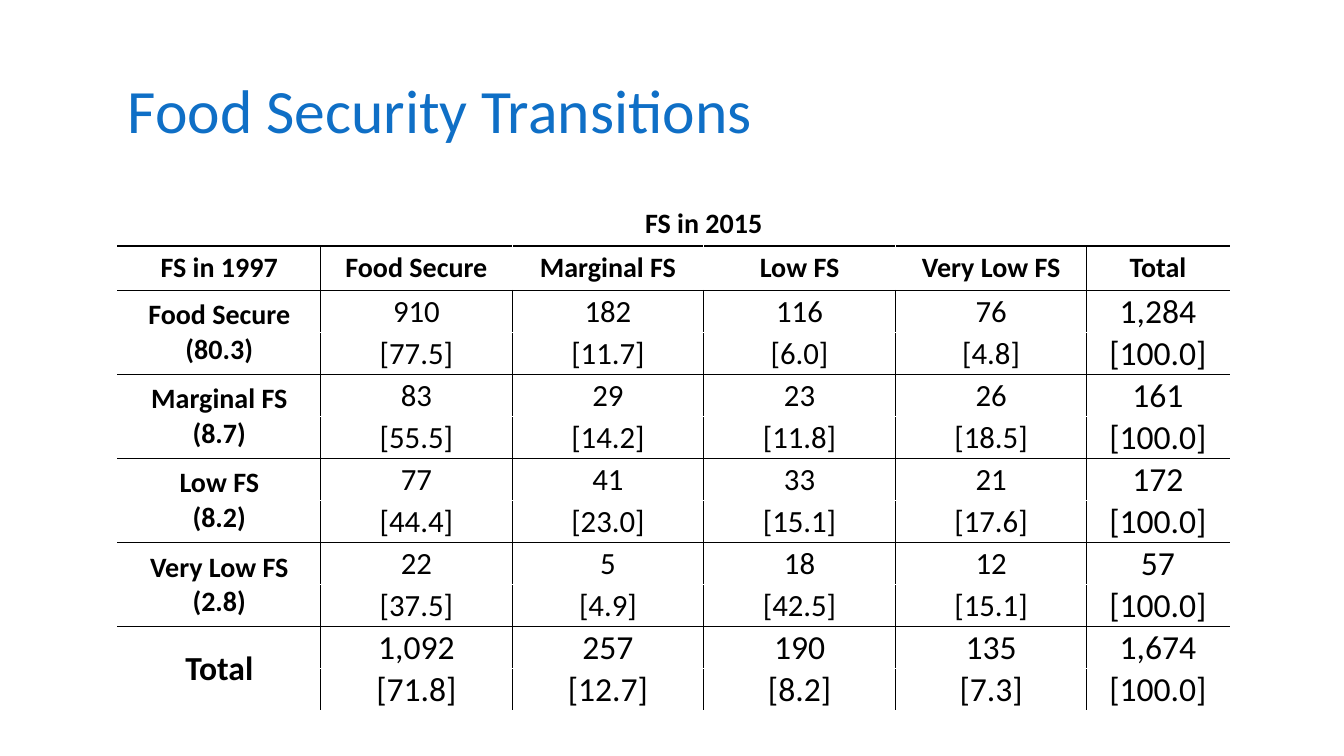
from lxml.etree import SubElement
from pptx import Presentation
from pptx.dml.color import RGBColor
from pptx.enum.text import MSO_ANCHOR as Anchor, PP_ALIGN as Align
from pptx.oxml.ns import qn
from pptx.util import Inches, Pt

COLUMN_WIDTHS = [2.01, 1.9, 1.9, 1.9, 1.9, 1.41]
ROW_COUNT = 12
TABLE_HEIGHT = 4.97
LAST_COLUMN = len(COLUMN_WIDTHS) - 1
TOTAL_ROW = ROW_COUNT - 2
ROWS = [
    ["", "FS in 2015", "", "", "", ""],
    ["FS in 1997", "Food Secure", "Marginal FS", "Low FS", "Very Low FS", "Total"],
    ["Food Secure", "910", "182", "116", "76", "1,284"],
    ["(80.3)", "[77.5]", "[11.7]", "[6.0]", "[4.8]", "[100.0]"],
    ["Marginal FS", "83", "29", "23", "26", "161"],
    ["(8.7)", "[55.5]", "[14.2]", "[11.8]", "[18.5]", "[100.0]"],
    ["Low FS", "77", "41", "33", "21", "172"],
    ["(8.2)", "[44.4]", "[23.0]", "[15.1]", "[17.6]", "[100.0]"],
    ["Very Low FS", "22", "5", "18", "12", "57"],
    ["(2.8)", "[37.5]", "[4.9]", "[42.5]", "[15.1]", "[100.0]"],
    ["Total", "1,092", "257", "190", "135", "1,674"],
    ["", "[71.8]", "[12.7]", "[8.2]", "[7.3]", "[100.0]"],
]


def color(value):
    return RGBColor.from_string(value)


def has_line_below(row):
    return row == 0 or (row % 2 == 1 and 0 < row < ROW_COUNT - 1)


def has_line_right(row, column):
    if row == 0:
        return False
    return column in (0, 4) if row == 1 else 0 <= column < LAST_COLUMN


def text_size(row, column):
    if row >= TOTAL_ROW or (row > 1 and column == LAST_COLUMN):
        return 24
    return 22 if row > 1 and column > 0 else 20


class TransitionSlide:
    font = "Calibri"
    ink = "000000"
    paper = "FFFFFF"
    accent = "0F6FC6"

    def __init__(self, deck):
        self.page = deck.slides.add_slide(deck.slide_layouts[6])

    def set_text(self, para, text, size, ink, bold=False, align=Align.LEFT):
        para.text = text
        para.alignment = align
        para.font.name = self.font
        para.font.size = Pt(size)
        para.font.bold = bold
        para.font.color.rgb = color(ink)

    def title(self, text, left, top, width, height):
        box = self.page.shapes.add_textbox(
            Inches(left), Inches(top), Inches(width), Inches(height))
        frame = box.text_frame
        frame.word_wrap = True
        frame.vertical_anchor = Anchor.MIDDLE
        para = frame.paragraphs[0]
        self.set_text(para, text, 44, self.accent)
        para.line_spacing = 0.9

    def borders(self, cell, row, column):
        lines = {
            "a:lnL": has_line_right(row, column - 1),
            "a:lnR": has_line_right(row, column),
            "a:lnT": has_line_below(row - 1),
            "a:lnB": has_line_below(row),
        }
        properties = cell._tc.get_or_add_tcPr()
        for tag, visible in lines.items():
            line = SubElement(properties, qn(tag), w=str(Pt(1)))
            fill = SubElement(line, qn("a:solidFill"))
            SubElement(fill, qn("a:srgbClr"), val=self.ink if visible else self.paper)

    def layout_cell(self, cell, row, column):
        cell.vertical_anchor = Anchor.MIDDLE
        if row < 2 or (row >= TOTAL_ROW and column == 0):
            return
        margin = Inches(0.01 if column else 0)
        cell.margin_left = cell.margin_right = cell.margin_top = margin
        cell.margin_bottom = 0
        if column == 0:
            cell.vertical_anchor = Anchor.TOP if row % 2 else Anchor.BOTTOM

    def table(self, left, top):
        frame = self.page.shapes.add_table(
            ROW_COUNT, len(COLUMN_WIDTHS), Inches(left), Inches(top),
            Inches(sum(COLUMN_WIDTHS)), Inches(TABLE_HEIGHT))
        table = frame.table
        table.first_row = table.horz_banding = False
        for column, width in zip(table.columns, COLUMN_WIDTHS):
            column.width = Inches(width)
        for row, texts in enumerate(ROWS):
            table.rows[row].height = Inches(TABLE_HEIGHT / ROW_COUNT)
            for column, text in enumerate(texts):
                cell = table.cell(row, column)
                self.layout_cell(cell, row, column)
                self.borders(cell, row, column)
                if row < 2:
                    cell.fill.background()
                else:
                    cell.fill.solid()
                    cell.fill.fore_color.rgb = color(self.paper)
                self.set_text(cell.text_frame.paragraphs[0], text, text_size(row, column),
                              self.ink, row < 2 or column == 0, Align.CENTER)
        table.cell(0, 1).merge(table.cell(0, 4))
        table.cell(TOTAL_ROW, 0).merge(table.cell(TOTAL_ROW + 1, 0))


def main():
    deck = Presentation()
    deck.slide_width = Inches(13.33)
    deck.slide_height = Inches(7.5)
    slide = TransitionSlide(deck)
    slide.table(1.17, 2)
    slide.title("Food Security Transitions", 1.17, 0.4, 11, 1.45)
    deck.save("out.pptx")


if __name__ == "__main__":
    main()
